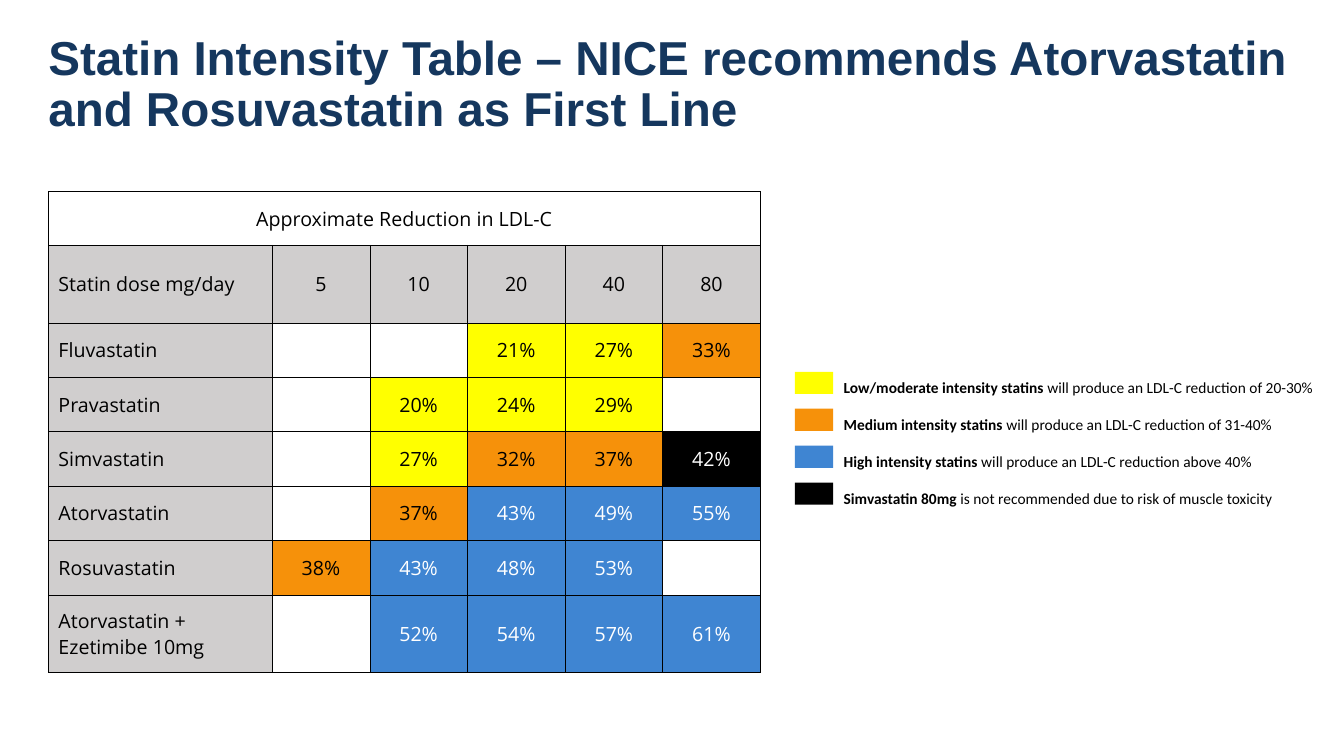
from dataclasses import dataclass

from lxml.etree import SubElement as Sub
from pptx import Presentation as Deck
from pptx.dml.color import RGBColor as Rgb
from pptx.enum.shapes import MSO_SHAPE as Form
from pptx.enum.text import MSO_ANCHOR as Anchor, MSO_AUTO_SIZE as Fit, PP_ALIGN as Align
from pptx.oxml.ns import qn
from pptx.util import Cm, Pt


@dataclass(frozen=True)
class Theme:
    navy: str = "15375E"
    black: str = "000000"
    white: str = "FFFFFF"
    grey: str = "D0CECE"
    low: str = "FFFF00"
    mid: str = "F6910A"
    high: str = "3F85D2"
    head: tuple = ("Arial", 34)
    grid: tuple = ("Open Sans", 14)
    key: tuple = ("Calibri", 11)
    rule: float = 0.5


TITLE = "Statin Intensity Table – NICE recommends Atorvastatin and Rosuvastatin as First Line"
HEADING = "Approximate Reduction in LDL-C"
DOSES = ["Statin dose mg/day", 5, 10, 20, 40, 80]
DRUGS = [
    ["Fluvastatin", None, None, 21, 27, 33],
    ["Pravastatin", None, 20, 24, 29, None],
    ["Simvastatin", None, 27, 32, 37, 42],
    ["Atorvastatin", None, 37, 43, 49, 55],
    ["Rosuvastatin", 38, 43, 48, 53, None],
    ["Atorvastatin + Ezetimibe 10mg", None, 52, 54, 57, 61],
]
AVOID = ("Simvastatin", 80)
WIDTHS = [5.64] + [2.46] * 5
HEIGHTS = [1.35, 1.96] + [1.37] * 5 + [1.96]


def assign(item, values):
    for name, value in values.items():
        setattr(item, name, value)


def area(x, y, w, h):
    return Cm(x), Cm(y), Cm(w), Cm(h)


class Page:
    def __init__(self, deck, theme):
        self.theme = theme
        self.slide = deck.slides.add_slide(deck.slide_layouts[5])

    def style(self, font, face, color, bold=False):
        name, size = face
        assign(font, {"name": name, "size": Pt(size), "bold": bold})
        font.color.rgb = Rgb.from_string(color)

    def title(self, text, box):
        shape = self.slide.shapes.title
        assign(shape, dict(zip(("left", "top", "width", "height"), box)))
        frame = shape.text_frame
        assign(frame, {"margin_left": 0, "margin_top": 0, "margin_right": 0,
                       "margin_bottom": 0, "word_wrap": True,
                       "auto_size": Fit.NONE, "vertical_anchor": Anchor.TOP})
        para = frame.paragraphs[0]
        assign(para, {"alignment": Align.LEFT, "line_spacing": 0.9})
        run = para.add_run()
        run.text = text
        self.style(run.font, self.theme.head, self.theme.navy, True)

    def border(self, cell):
        props = cell._tc.get_or_add_tcPr()
        for side in ("lnL", "lnR", "lnT", "lnB"):
            line = Sub(props, qn(f"a:{side}"), w=str(Pt(self.theme.rule)))
            Sub(Sub(line, qn("a:solidFill")), qn("a:srgbClr"), val=self.theme.black)

    def cell(self, cell, text, fill=None, align=Align.CENTER):
        self.border(cell)
        if fill:
            cell.fill.solid()
            cell.fill.fore_color.rgb = Rgb.from_string(fill)
        else:
            cell.fill.background()
        cell.vertical_anchor = Anchor.MIDDLE
        cell.text = text
        para = cell.text_frame.paragraphs[0]
        para.alignment = align
        dark = fill in (self.theme.high, self.theme.black)
        self.style(para.font, self.theme.grid, self.theme.white if dark else self.theme.black)

    def shade(self, drug, dose, value):
        """Pick the intensity colour for a percentage reduction."""
        if value is None:
            return None
        if (drug, dose) == AVOID:
            return self.theme.black
        if value <= 30:
            return self.theme.low
        return self.theme.mid if value <= 40 else self.theme.high

    def table(self, x, y):
        box = area(x, y, sum(WIDTHS), sum(HEIGHTS))
        grid = self.slide.shapes.add_table(len(HEIGHTS), len(WIDTHS), *box).table
        assign(grid, {"first_row": False, "horz_banding": False})
        for col, width in zip(grid.columns, WIDTHS):
            col.width = Cm(width)
        for row, height in zip(grid.rows, HEIGHTS):
            row.height = Cm(height)
        for c in range(len(WIDTHS)):
            self.cell(grid.cell(0, c), "" if c else HEADING)
        grid.cell(0, 0).merge(grid.cell(0, len(WIDTHS) - 1))
        for r, (name, *values) in enumerate([DOSES] + DRUGS, 1):
            self.cell(grid.cell(r, 0), name, self.theme.grey, Align.LEFT)
            for c, value in enumerate(values, 1):
                if r == 1:
                    text, fill = str(value), self.theme.grey
                else:
                    text = "" if value is None else f"{value}%"
                    fill = self.shade(name, DOSES[c], value)
                self.cell(grid.cell(r, c), text, fill)

    def swatch(self, shapes, fill, box):
        shape = shapes.add_shape(Form.RECTANGLE, *box)
        shape.shadow.inherit = False
        shape.fill.solid()
        shape.fill.fore_color.rgb = Rgb.from_string(fill)
        shape.line.fill.background()

    def legend(self, items, box, x, y, step):
        shapes = self.slide.shapes.add_group_shape().shapes
        frame = shapes.add_textbox(*box).text_frame
        assign(frame, {"word_wrap": True, "auto_size": Fit.SHAPE_TO_FIT_TEXT})
        for i, (fill, lead, rest) in enumerate(items):
            para = frame.add_paragraph() if i else frame.paragraphs[0]
            para.line_spacing = 2.0
            for text, bold in ((lead + " ", True), (rest, False)):
                run = para.add_run()
                run.text = text
                self.style(run.font, self.theme.key, self.theme.black, bold)
            self.swatch(shapes, fill, area(x, y + i * step, 0.97, 0.56))


def main():
    deck = Deck()
    assign(deck, {"slide_width": Cm(33.87), "slide_height": Cm(19.05)})
    theme = Theme()
    page = Page(deck, theme)
    page.title(TITLE, area(1.22, 0.86, 31.39, 1.22))
    page.table(1.22, 4.83)
    effect = "will produce an LDL-C reduction"
    page.legend([
        (theme.low, "Low/moderate intensity statins", f"{effect} of 20-30%"),
        (theme.mid, "Medium intensity statins", f"{effect} of 31-40%"),
        (theme.high, "High intensity statins", f"{effect} above 40%"),
        (theme.black, "Simvastatin 80mg", "is not recommended due to risk of muscle toxicity"),
    ], area(21.01, 8.94, 12.4, 3.89), 20.03, 9.37, 0.93)
    deck.save("out.pptx")


if __name__ == "__main__":
    main()
